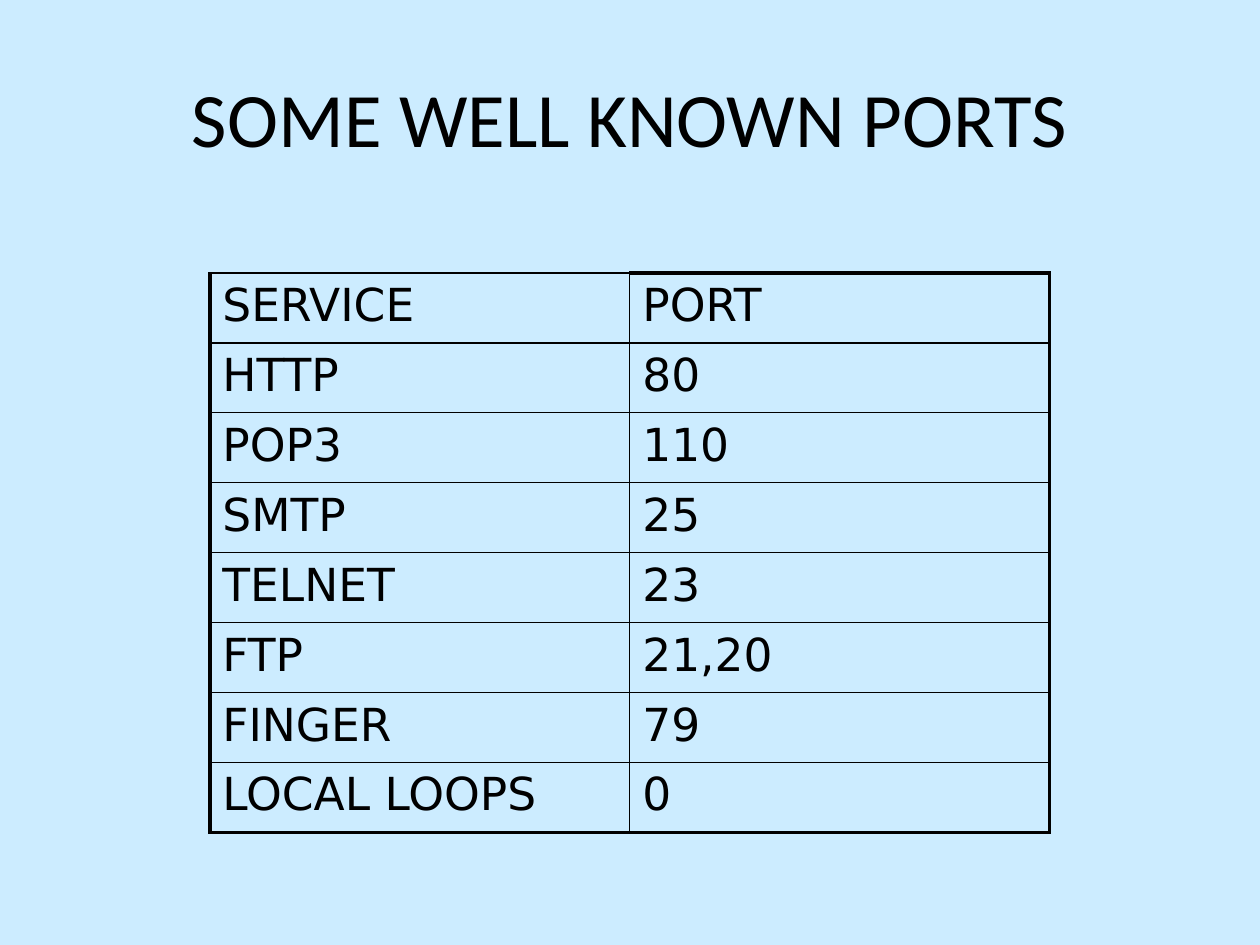
from pptx import Presentation
from pptx.dml.color import RGBColor as RGB
from pptx.enum.text import MSO_ANCHOR as Anchor, PP_ALIGN as Align
from pptx.oxml import parse_xml
from pptx.oxml.ns import nsdecls
from pptx.util import Cm, Pt

SKY = RGB(0xCC, 0xEC, 0xFF)
BLACK = RGB(0, 0, 0)
THIN, THICK = Pt(1), Pt(2.25)

PORTS = [
    ("SERVICE", "PORT"),
    ("HTTP", "80"),
    ("POP3", "110"),
    ("SMTP", "25"),
    ("TELNET", "23"),
    ("FTP", "21,20"),
    ("FINGER", "79"),
    ("LOCAL LOOPS", "0"),
]


def style(para, face, size):
    font = para.font
    font.name, font.size = face, Pt(size)
    font.color.rgb = BLACK


def add_title(slide, text):
    box = slide.shapes.add_textbox(Cm(1.27), Cm(0.76), Cm(22.86), Cm(3.18))
    frame = box.text_frame
    frame.word_wrap = True
    frame.vertical_anchor = Anchor.MIDDLE
    frame.text = text
    para = frame.paragraphs[0]
    para.alignment = Align.CENTER
    style(para, "Calibri", 44)


def add_edge(cell, side, width):
    cell._tc.get_or_add_tcPr().append(parse_xml(
        f'<a:ln{side} {nsdecls("a")} w="{width}"><a:solidFill>'
        f'<a:srgbClr val="{BLACK}"/></a:solidFill></a:ln{side}>'))


def fill_cell(cell, text, edges):
    for side, thick in edges.items():
        add_edge(cell, side, THICK if thick else THIN)
    cell.fill.background()
    cell.text = text
    style(cell.text_frame.paragraphs[0], "DejaVu Sans", 26)


def add_ports(slide, rows):
    count = len(rows)
    frame = slide.shapes.add_table(
        count, 2, Cm(4.23), Cm(5.5), Cm(16.93), Cm(1.41) * count)
    table = frame.table
    table.first_row = table.horz_banding = False
    for i, row in enumerate(rows):
        for j, text in enumerate(row):
            edges = {
                "L": j == 0,
                "R": j == 1,
                "T": i == 0 and j == 1,
                "B": i == count - 1,
            }
            fill_cell(table.cell(i, j), text, edges)


def main():
    deck = Presentation()
    deck.slide_width, deck.slide_height = Cm(25.4), Cm(19.05)
    slide = deck.slides.add_slide(deck.slide_layouts[6])
    back = slide.background.fill
    back.solid()
    back.fore_color.rgb = SKY
    add_title(slide, "SOME WELL KNOWN PORTS")
    add_ports(slide, PORTS)
    deck.save("out.pptx")


if __name__ == "__main__":
    main()
